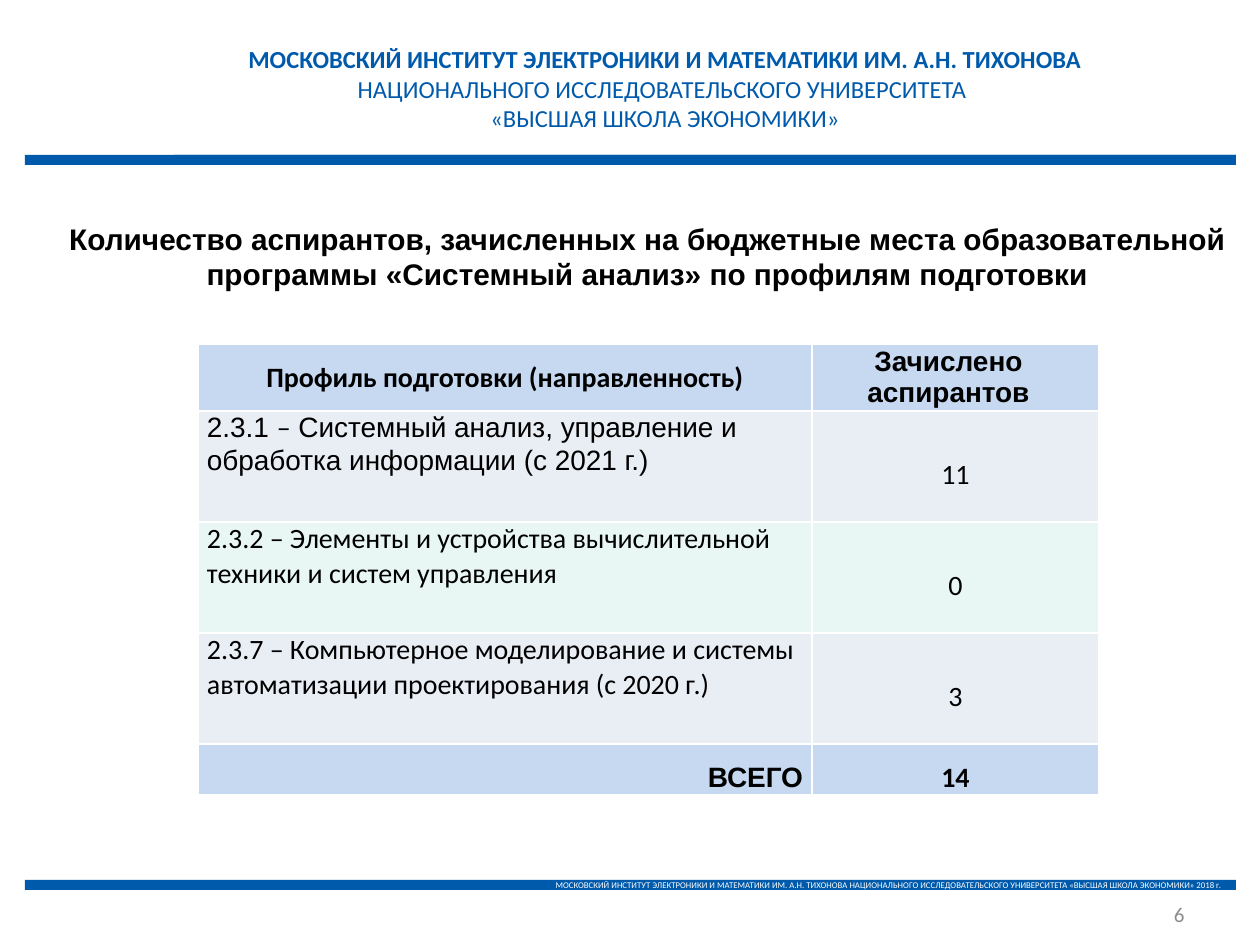
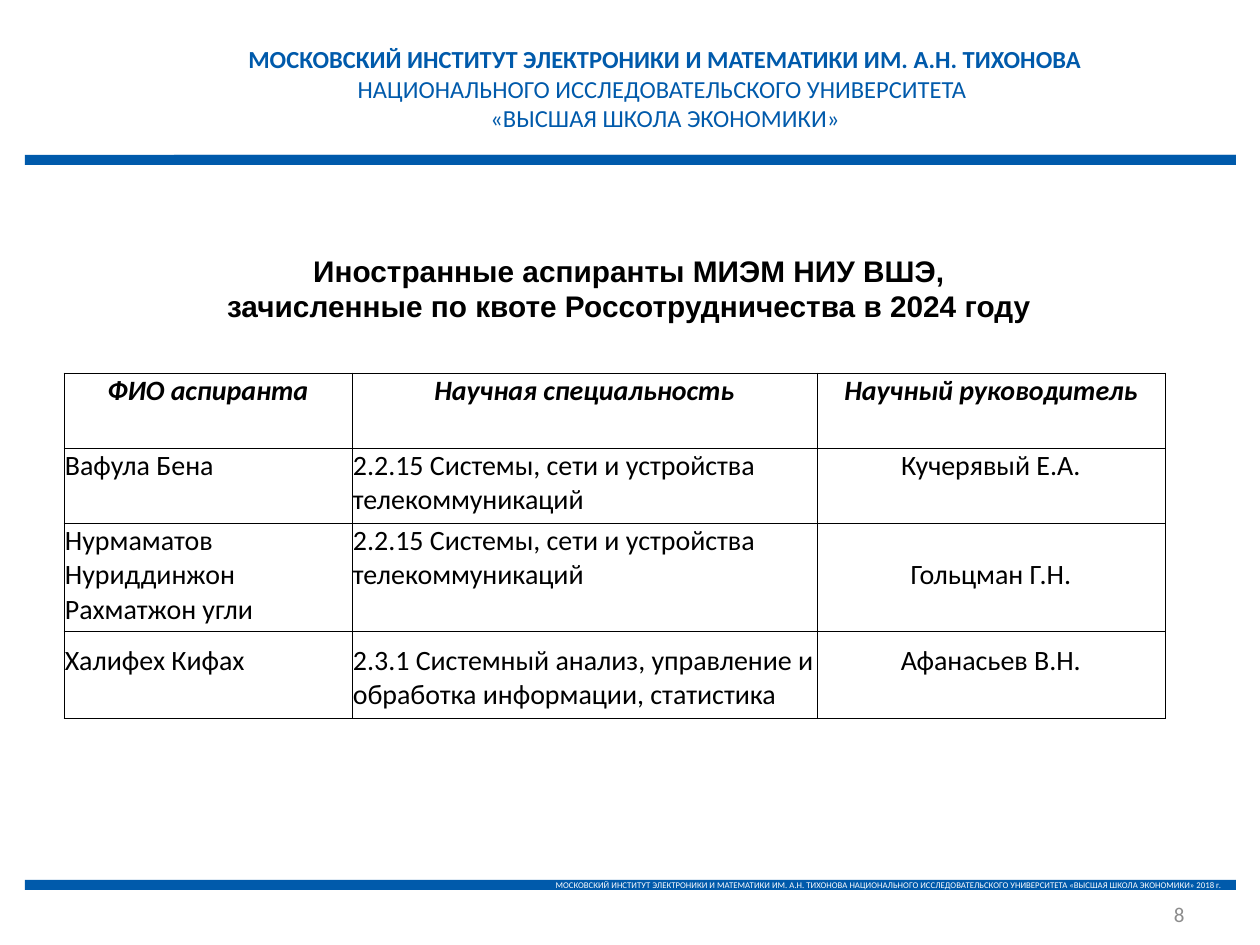
from dataclasses import dataclass

from lxml import etree
from pptx import Presentation
from pptx.dml.color import RGBColor
from pptx.enum.shapes import MSO_SHAPE
from pptx.enum.text import MSO_ANCHOR, MSO_AUTO_SIZE, PP_ALIGN
from pptx.oxml.ns import qn
from pptx.util import Pt

LEFT, CENTER, RIGHT = PP_ALIGN.LEFT, PP_ALIGN.CENTER, PP_ALIGN.RIGHT
TOP, MIDDLE = MSO_ANCHOR.TOP, MSO_ANCHOR.MIDDLE
RECTANGLE = MSO_SHAPE.RECTANGLE
NO_AUTOFIT = MSO_AUTO_SIZE.NONE
TITLE_ONLY = 5
EMU_PER_PX = 914400 / 126


@dataclass(frozen=True)
class Theme:
    blue: str = "005AAB"
    white: str = "FFFFFF"
    black: str = "000000"
    gray: str = "8C8C8C"
    header_fill: str = "C6D9F1"
    odd_fill: str = "E9EDF4"
    even_fill: str = "E9F7F4"
    body_font: str = "Calibri"
    title_font: str = "Arial"
    title_size: int = 17
    table_size: int = 16
    banner_size: int = 14
    number_size: int = 12
    footer_size: int = 5


THEME = Theme()

BANNER = [
    "МОСКОВСКИЙ ИНСТИТУТ ЭЛЕКТРОНИКИ И МАТЕМАТИКИ ИМ. А.Н. ТИХОНОВА",
    "НАЦИОНАЛЬНОГО ИССЛЕДОВАТЕЛЬСКОГО УНИВЕРСИТЕТА \v«ВЫСШАЯ ШКОЛА ЭКОНОМИКИ»",
]
FOOTER = (
    "МОСКОВСКИЙ ИНСТИТУТ ЭЛЕКТРОНИКИ И МАТЕМАТИКИ ИМ. А.Н. ТИХОНОВА "
    "НАЦИОНАЛЬНОГО ИССЛЕДОВАТЕЛЬСКОГО УНИВЕРСИТЕТА «ВЫСШАЯ ШКОЛА ЭКОНОМИКИ» 2018 г."
)
BANNER_BOX = (234, 38, 862, 102)
TOP_BANDS = [(174, 155, 1062, 10), (25, 155, 1211, 10)]
FOOTER_BAND = (25, 880, 1211, 10)
NUMBER_BOX = (903, 900, 294, 28)

ENROLMENT = {
    "number": "6",
    "title": [
        "Количество аспирантов, зачисленных на бюджетные места образовательной "
        "программы «Системный анализ» по профилям подготовки"
    ],
    "title_box": (54, 214, 1187, 84),
    "table_at": (198, 344),
    "columns": [614, 287],
    "row_heights": [66, 111, 111, 111, 51],
    "rows": [
        ("Профиль подготовки (направленность)", "Зачислено аспирантов"),
        ([("2.3.1 ", THEME.title_font), ("–", THEME.body_font),
          (" Системный анализ, управление и обработка информации (с 2021 г.)",
           THEME.title_font)], "11"),
        ("2.3.2 – Элементы и устройства вычислительной техники и систем управления",
         "0"),
        ("2.3.7 – Компьютерное моделирование и системы автоматизации "
         "проектирования (с 2020 г.)", "3"),
        ("ВСЕГО", "14"),
    ],
}

FOREIGN_STUDENTS = {
    "number": "8",
    "title": ["Иностранные аспиранты МИЭМ НИУ ВШЭ,",
              "зачисленные по квоте Россотрудничества в 2024 году"],
    "title_box": (49, 246, 1160, 84),
    "table_at": (64, 373),
    "columns": [288, 465, 348],
    "row_heights": [75, 75, 109, 87],
    "rows": [
        ("ФИО аспиранта", "Научная специальность", "Научный руководитель"),
        ("Вафула Бена", "2.2.15 Системы, сети и устройства телекоммуникаций",
         "Кучерявый Е.А."),
        ("Нурмаматов Нуриддинжон Рахматжон угли",
         "2.2.15 Системы, сети и устройства телекоммуникаций", "Гольцман Г.Н."),
        ("Халифех Кифах",
         "2.3.1 Системный анализ, управление и обработка информации, статистика",
         "Афанасьев В.Н."),
    ],
}


def px(length):
    return round(length * EMU_PER_PX)


def box(lengths):
    return [px(length) for length in lengths]


def write_text(frame, paragraphs, *, size, font=THEME.body_font, color=THEME.black,
               bold=False, italic=False, align=LEFT, anchor=TOP, line_spacing=None):
    """Each paragraph is a string or a list of (text, font name) runs."""
    frame.word_wrap = True
    frame.vertical_anchor = anchor
    for index, content in enumerate(paragraphs):
        paragraph = frame.paragraphs[0] if index == 0 else frame.add_paragraph()
        paragraph.alignment = align
        paragraph.line_spacing = line_spacing
        if isinstance(content, str):
            content = [(content, font)]
        for text, font_name in content:
            for part, line in enumerate(text.split("\v")):
                if part:
                    paragraph.add_line_break()
                run = paragraph.add_run()
                run.text = line
                run.font.name = font_name
                run.font.size = Pt(size)
                run.font.bold = bold
                run.font.italic = italic
                run.font.color.rgb = RGBColor.from_string(color)


def add_band(slide, position):
    band = slide.shapes.add_shape(RECTANGLE, *box(position))
    band.shadow.inherit = False
    band.fill.solid()
    band.fill.fore_color.rgb = RGBColor.from_string(THEME.blue)
    band.line.fill.background()
    return band


def move_frame_to_layout(slide, layout):
    """Build the bands, banner and footer once and keep them on the layout."""
    shapes = [add_band(slide, position) for position in TOP_BANDS]
    footer = add_band(slide, FOOTER_BAND)
    footer.text_frame.margin_top = footer.text_frame.margin_bottom = 0
    write_text(footer.text_frame, [FOOTER], size=THEME.footer_size,
               color=THEME.white, align=RIGHT, anchor=MIDDLE)
    banner = slide.shapes.add_textbox(*box(BANNER_BOX))
    write_text(banner.text_frame, BANNER, size=THEME.banner_size,
               color=THEME.blue, align=CENTER)
    banner.text_frame.paragraphs[0].runs[0].font.bold = True
    for shape in shapes + [footer, banner]:
        layout.shapes.element.append(shape.element)


def add_slide(presentation, layout, content):
    slide = presentation.slides.add_slide(layout)
    title = slide.shapes.title
    title.left, title.top, title.width, title.height = box(content["title_box"])
    title.text_frame.auto_size = NO_AUTOFIT
    write_text(title.text_frame, content["title"], size=THEME.title_size,
               font=THEME.title_font, bold=True, align=CENTER, anchor=MIDDLE)
    number = slide.shapes.add_textbox(*box(NUMBER_BOX))
    write_text(number.text_frame, [content["number"]], size=THEME.number_size,
               color=THEME.gray, align=RIGHT, anchor=MIDDLE)
    return slide


def set_borders(cell, color, width):
    properties = cell._tc.get_or_add_tcPr()
    for index, side in enumerate(("lnL", "lnR", "lnT", "lnB")):
        line = etree.Element(qn(f"a:{side}"), w=str(Pt(width)))
        fill = etree.SubElement(line, qn("a:solidFill"))
        etree.SubElement(fill, qn("a:srgbClr"), val=color)
        properties.insert(index, line)


def set_margins(cell, left, top, right, bottom):
    cell.margin_left, cell.margin_top = px(left), px(top)
    cell.margin_right, cell.margin_bottom = px(right), px(bottom)


def add_table(slide, content, style_cell):
    columns, heights = content["columns"], content["row_heights"]
    position = (*content["table_at"], sum(columns), sum(heights))
    table = slide.shapes.add_table(len(heights), len(columns), *box(position)).table
    table.first_row = table.horz_banding = False
    for column, width in zip(table.columns, columns):
        column.width = px(width)
    for row, height in zip(table.rows, heights):
        row.height = px(height)
    for row_index, row in enumerate(content["rows"]):
        for column_index, value in enumerate(row):
            style_cell(table.cell(row_index, column_index), value,
                       row_index, column_index)


def style_enrolment_cell(cell, value, row, column):
    last = len(ENROLMENT["rows"]) - 1
    header, total, count = row == 0, row == last, column == 1
    if header or total:
        fill = THEME.header_fill
    else:
        fill = THEME.odd_fill if row % 2 else THEME.even_fill
    cell.fill.solid()
    cell.fill.fore_color.rgb = RGBColor.from_string(fill)
    set_borders(cell, THEME.white, 1)
    if count:
        set_margins(cell, 0, 0, 14 if header else 0, 0)
    else:
        set_margins(cell, 9, 0, 9, 0)
    if header or count:
        align = CENTER
    else:
        align = RIGHT if total else LEFT
    write_text(
        cell.text_frame, [value], size=THEME.table_size,
        font=THEME.title_font if header == count and (header or total)
        else THEME.body_font,
        bold=header or total, align=align,
        line_spacing=1.5 if total or (count and not header) else None)
    cell.vertical_anchor = MIDDLE if header or total or count else TOP


def style_student_cell(cell, value, row, column):
    header, supervisor = row == 0, column == 2
    last = len(FOREIGN_STUDENTS["rows"]) - 1
    cell.fill.background()
    set_borders(cell, THEME.black, 0.5)
    set_margins(cell, 1, 12 if row == last else 1, 1, 6)
    write_text(cell.text_frame, [value], size=THEME.table_size, bold=header,
               italic=header, align=CENTER if header or supervisor else LEFT)
    cell.vertical_anchor = MIDDLE if supervisor and row == 2 else TOP


def main():
    presentation = Presentation()
    presentation.slide_width, presentation.slide_height = px(1260), px(945)
    layout = presentation.slide_layouts[TITLE_ONLY]
    enrolment = add_slide(presentation, layout, ENROLMENT)
    move_frame_to_layout(enrolment, layout)
    add_table(enrolment, ENROLMENT, style_enrolment_cell)
    students = add_slide(presentation, layout, FOREIGN_STUDENTS)
    add_table(students, FOREIGN_STUDENTS, style_student_cell)
    presentation.save("out.pptx")


if __name__ == "__main__":
    main()
